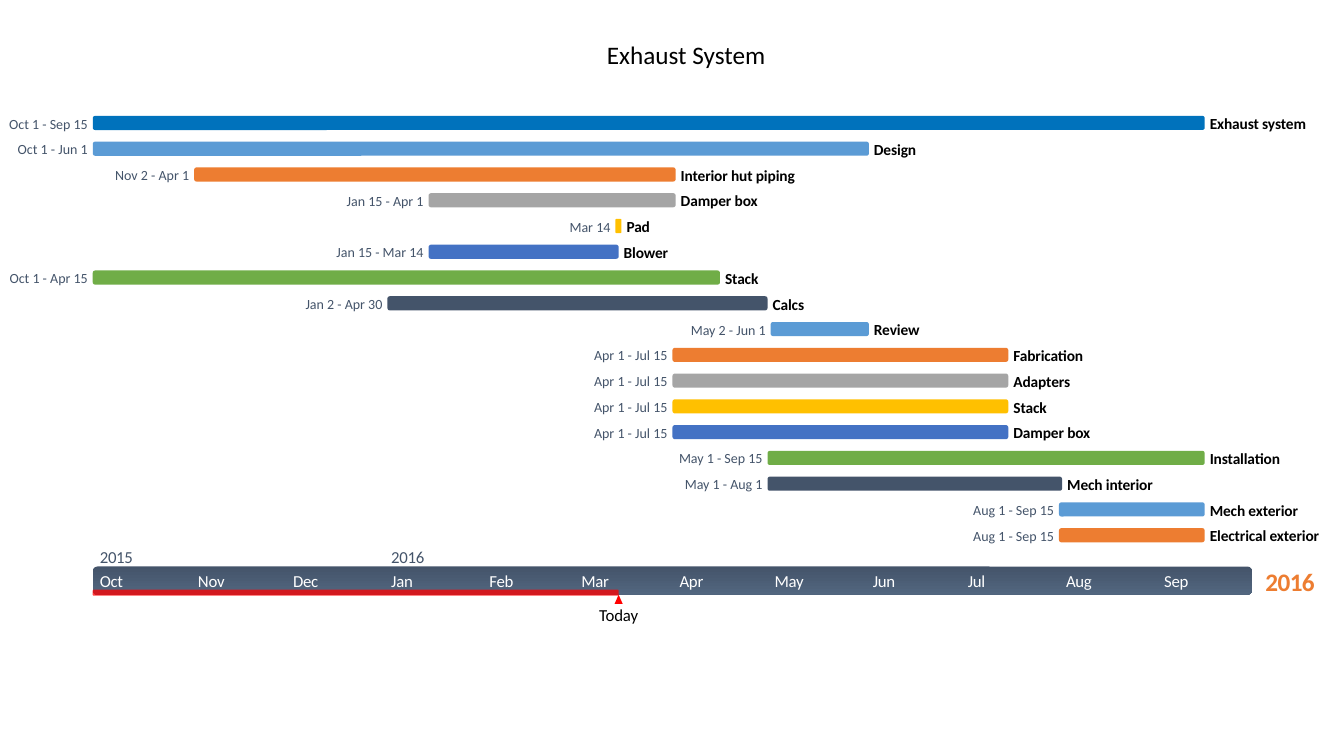
import dataclasses
import itertools

import pptx
import pptx.dml.color
import pptx.enum.shapes
import pptx.enum.text
import pptx.oxml.ns
import pptx.slide
import pptx.util
from lxml import etree
from pptx.util import Inches

ALIGN = pptx.enum.text.PP_ALIGN
SHAPE = pptx.enum.shapes.MSO_SHAPE

MONTH_DAYS = {"Oct": 31, "Nov": 30, "Dec": 31, "Jan": 31, "Feb": 29, "Mar": 31,
              "Apr": 30, "May": 31, "Jun": 30, "Jul": 31, "Aug": 31, "Sep": 30}
MONTH_STARTS = dict(zip(MONTH_DAYS, itertools.accumulate(MONTH_DAYS.values(), initial=0)))

AXIS_LEFT, AXIS_TOP, AXIS_WIDTH, AXIS_HEIGHT = 0.92, 5.62, 11.5, 0.28
DAY_WIDTH = AXIS_WIDTH / sum(MONTH_DAYS.values())
FIRST_ROW, LAST_ROW = 1.15, 5.24
BAR_HEIGHT, MIN_BAR_WIDTH, LABEL_GAP = 0.14, 0.06, 0.05
SLATE, ORANGE, BLACK, WHITE, RED = "44546A", "ED7D31", "000000", "FFFFFF", "FF0000"
PROJECT_COLOR = "0072BC"
TASK_COLORS = ["5B9BD5", ORANGE, "A5A5A5", "FFC000", "4472C4", "70AD47", SLATE]
TODAY = "Mar 14"


@dataclasses.dataclass
class Task:
    name: str
    start: str
    end: str
    dates_width: float
    name_width: float

    @property
    def dates(self) -> str:
        return self.start if self.start == self.end else f"{self.start} - {self.end}"


@dataclasses.dataclass
class Style:
    size: float
    color: str
    bold: bool = False
    align: ALIGN = ALIGN.LEFT
    spacing: float = 0


TITLE = Style(18, BLACK, align=ALIGN.CENTER)
DATES = Style(10, SLATE, align=ALIGN.RIGHT)
NAME = Style(11, BLACK, bold=True, spacing=-0.1)
MONTH = Style(12, WHITE, spacing=-0.2)
YEAR = Style(12, SLATE, spacing=-0.2)
TODAY_STYLE = Style(12, BLACK, align=ALIGN.CENTER, spacing=-0.1)
END_YEAR = Style(18, ORANGE, bold=True, align=ALIGN.CENTER, spacing=-0.4)

TASKS = [
    Task("Exhaust system", "Oct 1", "Sep 15", 0.79, 0.99),
    Task("Design", "Oct 1", "Jun 1", 0.71, 0.43),
    Task("Interior hut piping", "Nov 2", "Apr 1", 0.74, 1.17),
    Task("Damper box", "Jan 15", "Apr 1", 0.78, 0.78),
    Task("Pad", "Mar 14", "Mar 14", 0.42, 0.24),
    Task("Blower", "Jan 15", "Mar 14", 0.88, 0.46),
    Task("Stack", "Oct 1", "Apr 15", 0.79, 0.35),
    Task("Calcs", "Jan 2", "Apr 30", 0.78, 0.32),
    Task("Review", "May 2", "Jun 1", 0.75, 0.47),
    Task("Fabrication", "Apr 1", "Jul 15", 0.74, 0.71),
    Task("Adapters", "Apr 1", "Jul 15", 0.74, 0.58),
    Task("Stack", "Apr 1", "Jul 15", 0.74, 0.35),
    Task("Damper box", "Apr 1", "Jul 15", 0.74, 0.78),
    Task("Installation", "May 1", "Sep 15", 0.83, 0.72),
    Task("Mech interior", "May 1", "Aug 1", 0.78, 0.88),
    Task("Mech exterior", "Aug 1", "Sep 15", 0.81, 0.9),
    Task("Electrical exterior", "Aug 1", "Sep 15", 0.81, 1.11),
]


def rgb(color: str) -> pptx.dml.color.RGBColor:
    return pptx.dml.color.RGBColor.from_string(color)


def day_left(date: str) -> float:
    """Left edge, in inches, of a date such as "Nov 2"."""
    month, day = date.split()
    return AXIS_LEFT + (MONTH_STARTS[month] + int(day) - 1) * DAY_WIDTH


def day_right(date: str) -> float:
    return day_left(date) + DAY_WIDTH


def add_block(slide: pptx.slide.Slide, kind: SHAPE, left: float, top: float,
              width: float, height: float, color: str):
    block = slide.shapes.add_shape(kind, Inches(left), Inches(top), Inches(width), Inches(height))
    block.shadow.inherit = False
    block.fill.solid()
    block.fill.fore_color.rgb = rgb(color)
    block.line.fill.background()
    return block


def add_text(slide: pptx.slide.Slide, text: str, left: float, top: float,
             width: float, height: float, style: Style) -> None:
    frame = slide.shapes.add_textbox(
        Inches(left), Inches(top), Inches(width), Inches(height)).text_frame
    frame.margin_left = frame.margin_right = frame.margin_top = frame.margin_bottom = 0
    frame.vertical_anchor = pptx.enum.text.MSO_ANCHOR.MIDDLE
    frame.word_wrap = False
    paragraph = frame.paragraphs[0]
    paragraph.text = text
    paragraph.alignment = style.align
    font = paragraph.font
    font.name, font.size, font.bold = "Calibri", pptx.util.Pt(style.size), style.bold
    font.color.rgb = rgb(style.color)
    if style.spacing:
        run_properties = paragraph.runs[0]._r.get_or_add_rPr()
        run_properties.set("spc", str(round(style.spacing * 100)))


def add_axis(slide: pptx.slide.Slide) -> None:
    axis = add_block(slide, SHAPE.ROUNDED_RECTANGLE, AXIS_LEFT, AXIS_TOP,
                     AXIS_WIDTH, AXIS_HEIGHT, SLATE)
    axis.fill.gradient()
    axis.fill.gradient_angle = 270
    for stop, color in zip(axis.fill.gradient_stops, (SLATE, "52667F")):
        stop.color.rgb = rgb(color)

    today = day_right(TODAY)
    elapsed = add_block(slide, SHAPE.ROUNDED_RECTANGLE, AXIS_LEFT, 5.85,
                        today - AXIS_LEFT, 0.06, RED)
    red = elapsed.element.spPr.find(".//" + pptx.oxml.ns.qn("a:srgbClr"))
    etree.SubElement(red, pptx.oxml.ns.qn("a:alpha"), val="75000")
    add_block(slide, SHAPE.ISOSCELES_TRIANGLE, today - 0.04, 5.9, 0.08, 0.09, RED)
    add_text(slide, "Today", today - 0.2, 6, 0.4, 0.2, TODAY_STYLE)

    for month in MONTH_DAYS:
        add_text(slide, month, day_left(f"{month} 1") + 0.07, 5.67, 0.4, 0.19, MONTH)
    for year, first_day in (("2015", "Oct 1"), ("2016", "Jan 1")):
        add_text(slide, year, day_left(first_day) + 0.07, 5.42, 0.4, 0.2, YEAR)
    add_text(slide, "2016", 12.55, 5.61, 0.49, 0.31, END_YEAR)


def add_task(slide: pptx.slide.Slide, task: Task, top: float, color: str) -> None:
    left = day_left(task.start)
    width = max(day_right(task.end) - left, MIN_BAR_WIDTH)
    add_block(slide, SHAPE.ROUNDED_RECTANGLE, left, top, width, BAR_HEIGHT, color)
    add_text(slide, task.dates, left - LABEL_GAP - task.dates_width, top - 0.01,
             task.dates_width, 0.17, DATES)
    add_text(slide, task.name, left + width + LABEL_GAP, top - 0.02,
             task.name_width, 0.19, NAME)


def main() -> None:
    deck = pptx.Presentation()
    deck.slide_width, deck.slide_height = Inches(13.33), Inches(7.5)
    slide = deck.slides.add_slide(deck.slide_layouts[6])
    add_axis(slide)
    pitch = (LAST_ROW - FIRST_ROW) / (len(TASKS) - 1)
    colors = itertools.chain([PROJECT_COLOR], itertools.cycle(TASK_COLORS))
    for row, (task, color) in enumerate(zip(TASKS, colors)):
        add_task(slide, task, FIRST_ROW + row * pitch, color)
    add_text(slide, "Exhaust System", 3.43, 0.34, 6.75, 0.4, TITLE)
    deck.save("out.pptx")


if __name__ == "__main__":
    main()
